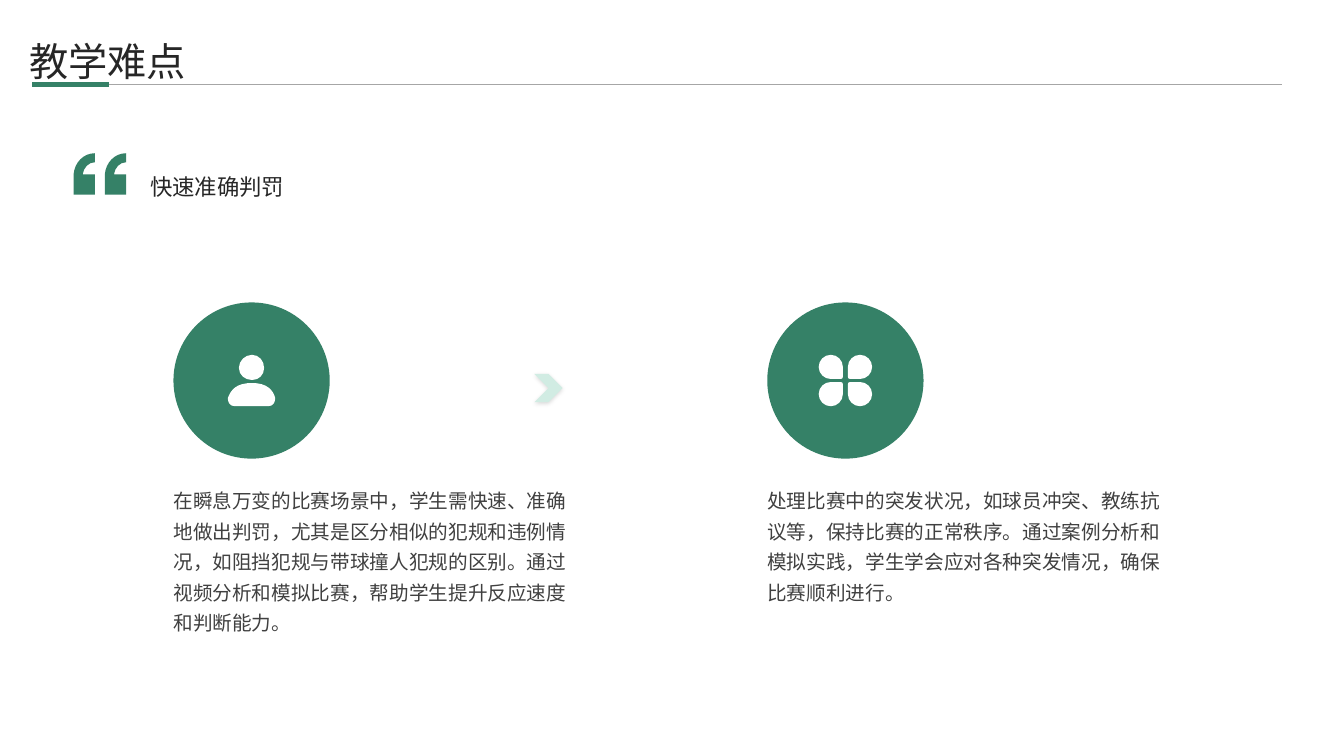
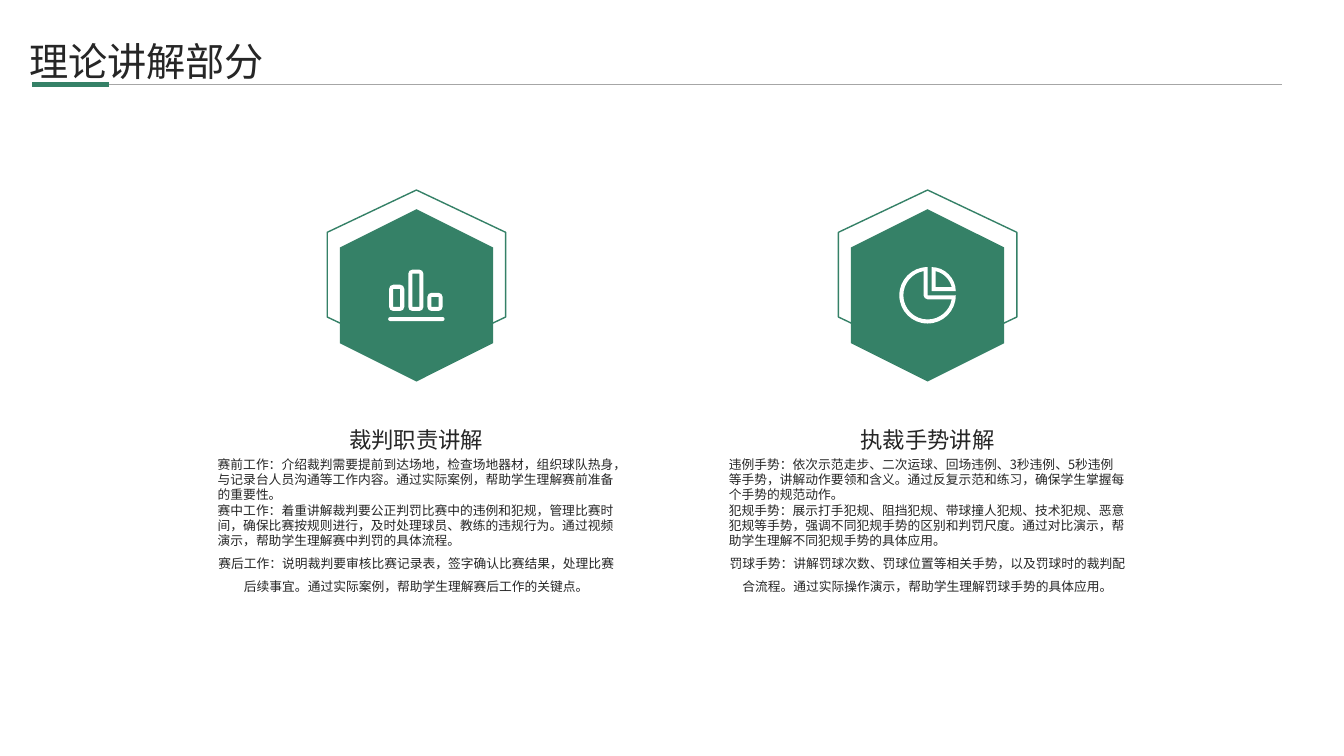
from lxml import etree
from pptx import Presentation
from pptx import util as u
from pptx.dml.color import RGBColor
from pptx.enum import shapes, text
from pptx.oxml import ns

GREEN = RGBColor(0x35, 0x81, 0x67)
MINT = RGBColor(0xD1, 0xEC, 0xE3)
WHITE = RGBColor(0xFF, 0xFF, 0xFF)
INK = RGBColor(0x26, 0x26, 0x26)
BODY = RGBColor(0x40, 0x40, 0x40)
RULE = RGBColor(0xA6, 0xA6, 0xA6)
FONT = "Noto Sans CJK SC"
KIND = shapes.MSO_SHAPE
CENTER, LEFT = text.PP_ALIGN.CENTER, text.PP_ALIGN.LEFT

MARK = [(21, 0), (21, 9), (15, 9, 10, 14, 9, 21), (21, 21), (21, 41),
        (0, 41), (0, 21), (1, 9, 10, 0, 21, 0)]
SHOULDERS = [(24, 28), (39, 28, 45, 35, 47, 43), (47, 47, 45, 51, 40, 51),
             (7, 51), (2, 51, 0, 47, 0, 43), (3, 35, 8, 28, 24, 28)]
HEAD = [(24, 0), (31, 0, 36, 6, 36, 13), (36, 20, 31, 25, 24, 25),
        (17, 25, 11, 20, 11, 13), (11, 6, 17, 0, 24, 0)]
PETAL = [(12, 0), (18.6, 0, 24, 5.4, 24, 12), (24, 22),
         (24, 23.1, 23.1, 24, 22, 24), (12, 24),
         (5.4, 24, 0, 18.6, 0, 12), (0, 5.4, 5.4, 0, 12, 0)]
PIE = [
    [(28, 0), (28, 28), (56, 28), (56, 43.5, 43.5, 56, 28, 56),
     (12.5, 56, 0, 43.5, 0, 28), (0, 12.5, 12.5, 0, 28, 0)],
    [(24, 4), (24, 28), (24, 30, 26, 32, 28, 32), (52, 32), (50, 43.5, 40, 52, 28, 52),
     (14.7, 52, 4, 41.3, 4, 28), (4, 16, 12.7, 6, 24, 4)],
    [(32, 0), (45, 0, 56, 11, 56, 24), (32, 24)],
    [(36, 4), (36, 20), (52, 20), (50, 12, 44, 6, 36, 4)]]


def reshape(contour, shift=0, flip_x=None, flip_y=None):
    """Shift a contour sideways or mirror it within a given size."""
    def move(place, value):
        """Change one coordinate, x at even places and y at odd ones."""
        size = flip_y if place % 2 else flip_x
        value = value if size is None else size - value
        return value if place % 2 else value + shift
    return [tuple(move(place, value) for place, value in enumerate(part)) for part in contour]


def rectangle(x, y, wide, high):
    """Return the corners of a rectangle."""
    return [(x, y), (x + wide, y), (x + wide, y + high), (x, y + high)]


def rounded(x, y, wide, high, radius):
    """Return the contour of a rectangle with round corners."""
    right, bottom, pull = x + wide, y + high, radius * 0.45
    return [(x + radius, y), (right - radius, y),
            (right - pull, y, right, y + pull, right, y + radius), (right, bottom - radius),
            (right, bottom - pull, right - pull, bottom, right - radius, bottom),
            (x + radius, bottom), (x + pull, bottom, x, bottom - pull, x, bottom - radius),
            (x, y + radius), (x, y + pull, x + pull, y, x + radius, y)]


def bars():
    """Return three hollow bars on a base line."""
    contours = [rounded(0, 47, 56, 4, 2)]
    for column, rise in enumerate((15, 0, 23)):
        x = 1 + 19 * column
        contours.append(rounded(x, rise, 15, 41 - rise, 4))
        contours.append(rectangle(x + 4, rise + 4, 7, 33 - rise))
    return contours


QUOTE = [MARK, reshape(MARK, shift=31)]
PERSON = [SHOULDERS, HEAD]
PETALS = [reshape(PETAL, flip_x=x, flip_y=y) for x in (None, 53) for y in (None, 51)]


def paint(shape, fill=None, line=None, width=1):
    """Give a shape its fill and line and drop its shadow."""
    shape.shadow.inherit = False
    if fill is None:
        shape.fill.background()
    else:
        shape.fill.solid()
        shape.fill.fore_color.rgb = fill
    if line is None:
        shape.line.fill.background()
    else:
        shape.line.color.rgb = line
        shape.line.width = u.Pt(width)
    return shape


def add_preset(page, kind, box, rotation=0, **colours):
    """Add a painted preset shape in a box given in inches."""
    shape = page.shapes.add_shape(kind, *map(u.Inches, box))
    shape.rotation = rotation
    return paint(shape, **colours)


def bend(shape, contours):
    """Join each three segments of a curved part into one cubic curve."""
    segments = iter(list(shape._element.iter(ns.qn("a:lnTo"))))
    for contour in contours:
        for part in contour[1:]:
            group = [next(segments) for _ in range(len(part) // 2)]
            if len(group) == 3:
                curve = etree.Element(ns.qn("a:cubicBezTo"))
                group[0].addprevious(curve)
                for segment in group:
                    curve.append(segment[0])
                    segment.getparent().remove(segment)


def add_outline(page, left, top, contours, **colours):
    """Draw contours of corners and curves, in hundredths of an inch."""
    builder = None
    for contour in contours:
        points = [(u.Inches(left + part[i] / 100), u.Inches(top + part[i + 1] / 100))
                  for part in contour for i in range(0, len(part), 2)]
        if builder is None:
            builder = page.shapes.build_freeform(*points[0], scale=1.0)
        else:
            builder.move_to(*points[0])
        builder.add_line_segments(points[1:], close=True)
    shape = builder.convert_to_shape()
    bend(shape, contours)
    return paint(shape, **colours)


def write(frame, content, size, color=INK, spacing=1.0, align=LEFT):
    """Append a formatted paragraph to a text frame."""
    para = frame.paragraphs[-1]
    if para.runs:
        para = frame.add_paragraph()
    para.alignment = align
    para.line_spacing = spacing
    span = para.add_run()
    span.text = content
    span.font.size = u.Pt(size)
    span.font.color.rgb = color
    span.font.name = FONT
    east = etree.SubElement(span.font._element, ns.qn("a:ea"))
    east.set("typeface", FONT)


def add_frame(page, box, margins=(0, 0, 0, 0), anchor=text.MSO_ANCHOR.TOP):
    """Add a wrapping text box and return its frame."""
    frame = page.shapes.add_textbox(*map(u.Inches, box)).text_frame
    set_frame(frame, margins, anchor)
    return frame


def set_frame(frame, margins, anchor):
    """Set the wrap, anchor and margins of a text frame."""
    frame.word_wrap = True
    frame.vertical_anchor = anchor
    (frame.margin_left, frame.margin_top,
     frame.margin_right, frame.margin_bottom) = map(u.Inches, margins)


def add_rule(page, left, right, level, color, width):
    """Draw a horizontal line with square ends and no shadow."""
    rule = page.shapes.add_connector(
        shapes.MSO_CONNECTOR.STRAIGHT, *map(u.Inches, (left, level, right, level)))
    rule.line.color.rgb = color
    rule.line.width = u.Pt(width)
    rule.line._get_or_add_ln().set("cap", "sq")
    etree.SubElement(rule._element.spPr, ns.qn("a:effectLst"))


def add_page(deck, heading):
    """Add a title-only slide with its heading and double rule."""
    page = deck.slides.add_slide(deck.slide_layouts[5])
    title = page.shapes.title
    title.left, title.top, title.width, title.height = map(u.Inches, (0.19, 0.27, 12.51, 0.53))
    set_frame(title.text_frame, (0.1, 0.05, 0.1, 0.05), text.MSO_ANCHOR.TOP)
    title.text_frame.auto_size = text.MSO_AUTO_SIZE.SHAPE_TO_FIT_TEXT
    write(title.text_frame, heading, 28, spacing=1.1)
    add_rule(page, 0.34, 12.71, 0.84, RULE, 0.5)
    add_rule(page, 0.34, 1.06, 0.84, GREEN, 3.5)
    return page


def add_lead(page, left, top, content):
    """Place a quotation mark and the lead sentence beside it."""
    add_outline(page, left, top, QUOTE, fill=GREEN)
    write(add_frame(page, (left + 0.76, top + 0.06, 10.77, 1.42)), content, 16, spacing=1.5)


def add_difficulty(page, left, top, content, icon, icon_size):
    """Place a round badge with its explanation below."""
    disc = 1.55
    add_preset(page, KIND.OVAL, (left, top, disc, disc), fill=GREEN)
    add_outline(page, left + (disc - icon_size[0]) / 2, top + (disc - icon_size[1]) / 2,
                icon, fill=WHITE)
    frame = add_frame(page, (left, top + 1.74, 4.01, 1.76), (0, 0.04, 0, 0.04))
    write(frame, content, 14, BODY, 1.3)


def add_chevron(page, box):
    """Place the pale arrow with its soft shadow."""
    chevron = add_preset(page, KIND.CHEVRON, box, fill=MINT)
    effects = chevron._element.spPr.find(ns.qn("a:effectLst"))
    shadow = etree.SubElement(effects, ns.qn("a:outerShdw"), blurRad=str(u.Pt(3)),
                              dist=str(u.Pt(1)), dir="5400000", algn="t", rotWithShape="0")
    tint = etree.SubElement(shadow, ns.qn("a:srgbClr"), val="000000")
    etree.SubElement(tint, ns.qn("a:alpha"), val="15000")


def add_topic(page, left, top, heading, points, icon, icon_size):
    """Place a double hexagon, a heading and three points in a column."""
    width = 3.94
    middle = left + width / 2
    for wide, high, drop, colours in ((1.68, 1.77, 0, {"line": GREEN}),
                                      (1.71, 1.52, 0.33, {"fill": GREEN})):
        add_preset(page, KIND.HEXAGON, (middle - wide / 2, top + drop, wide, high),
                   rotation=90, **colours)
    add_outline(page, middle - icon_size[0] / 2, top + 1.09 - icon_size[1] / 2,
                icon, fill=WHITE)
    head = add_frame(page, (left, top + 2.14, width, 0.51), anchor=text.MSO_ANCHOR.BOTTOM)
    write(head, heading, 16, spacing=1.3, align=CENTER)
    body = add_frame(page, (left, top + 2.69, width, 1.71))
    for point in points[:-1]:
        write(body, point, 9.1)
    write(body, points[-1], 9.1, spacing=1.5, align=CENTER)


def build_difficulties(deck):
    """Build the slide on teaching difficulties."""
    page = add_page(deck, "教学难点")
    add_lead(page, 0.73, 1.52, "快速准确判罚")
    items = (
        ("在瞬息万变的比赛场景中，学生需快速、准确地做出判罚，尤其是区分相似的犯规和违例情况，"
         "如阻挡犯规与带球撞人犯规的区别。通过视频分析和模拟比赛，帮助学生提升反应速度和判断能力。",
         PERSON, (0.47, 0.51)),
        ("处理比赛中的突发状况，如球员冲突、教练抗议等，保持比赛的正常秩序。"
         "通过案例分析和模拟实践，学生学会应对各种突发情况，确保比赛顺利进行。",
         PETALS, (0.53, 0.51)))
    for column, item in enumerate(items):
        add_difficulty(page, 1.72 + 5.89 * column, 3, *item)
    add_chevron(page, (5.3, 3.71, 0.28, 0.28))


def build_theory(deck):
    """Build the slide on theory lessons."""
    page = add_page(deck, "理论讲解部分")
    topics = (
        ("裁判职责讲解",
         ("赛前工作：介绍裁判需要提前到达场地，检查场地器材，组织球队热身，与记录台人员沟通等工作内容。"
          "通过实际案例，帮助学生理解赛前准备的重要性。",
          "赛中工作：着重讲解裁判要公正判罚比赛中的违例和犯规，管理比赛时间，确保比赛按规则进行，"
          "及时处理球员、教练的违规行为。通过视频演示，帮助学生理解赛中判罚的具体流程。",
          "赛后工作：说明裁判要审核比赛记录表，签字确认比赛结果，处理比赛后续事宜。"
          "通过实际案例，帮助学生理解赛后工作的关键点。"),
         bars(), (0.56, 0.51)),
        ("执裁手势讲解",
         ("违例手势：依次示范走步、二次运球、回场违例、3秒违例、5秒违例等手势，讲解动作要领和含义。"
          "通过反复示范和练习，确保学生掌握每个手势的规范动作。",
          "犯规手势：展示打手犯规、阻挡犯规、带球撞人犯规、技术犯规、恶意犯规等手势，"
          "强调不同犯规手势的区别和判罚尺度。通过对比演示，帮助学生理解不同犯规手势的具体应用。",
          "罚球手势：讲解罚球次数、罚球位置等相关手势，以及罚球时的裁判配合流程。"
          "通过实际操作演示，帮助学生理解罚球手势的具体应用。"),
         PIE, (0.56, 0.56)))
    for column, topic in enumerate(topics):
        add_topic(page, 2.16 + 5.07 * column, 1.84, *topic)


def main():
    """Build and save the deck."""
    deck = Presentation()
    deck.slide_width, deck.slide_height = u.Inches(13.33), u.Inches(7.5)
    build_difficulties(deck)
    build_theory(deck)
    deck.save("out.pptx")


if __name__ == "__main__":
    main()
